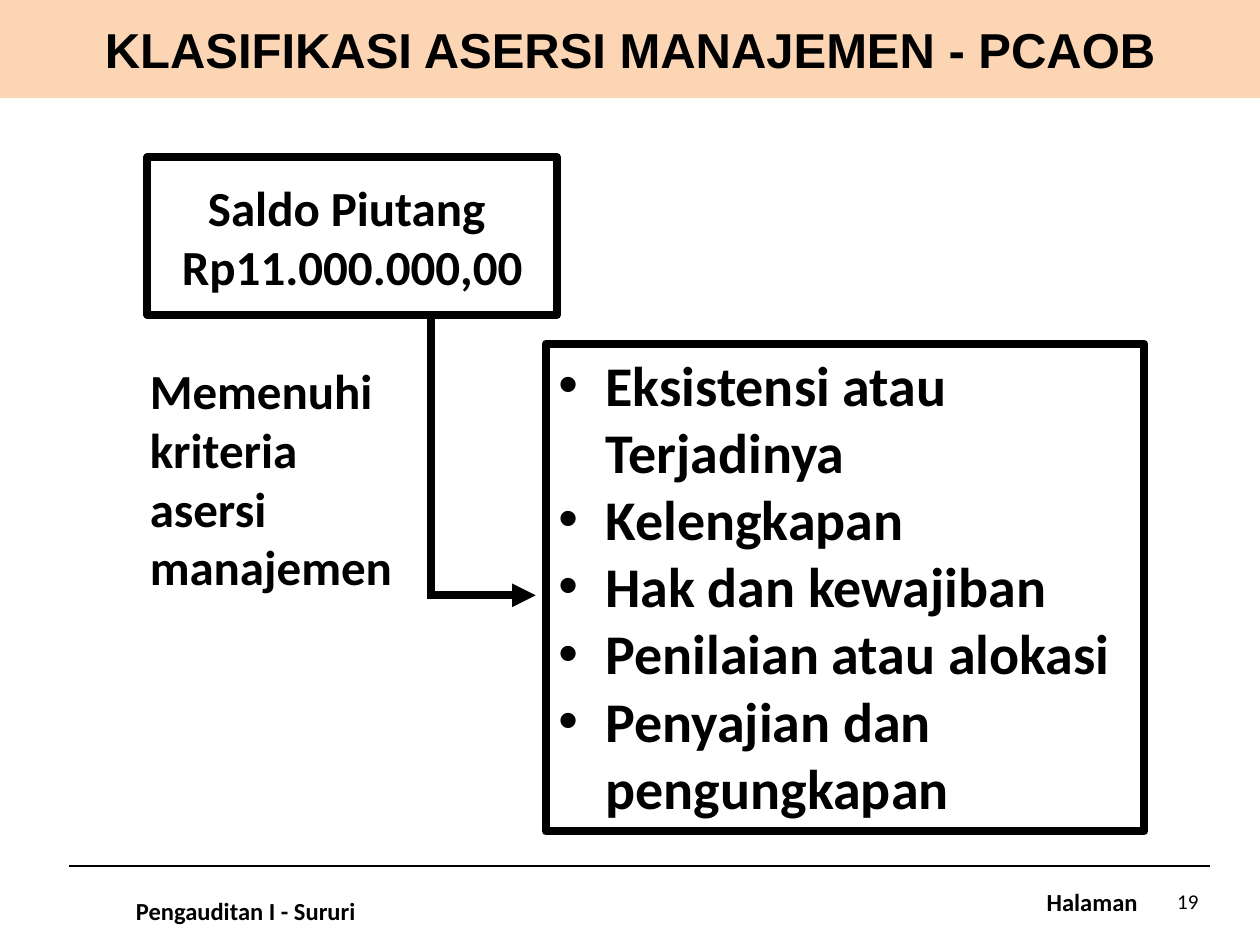
from dataclasses import dataclass

from lxml.etree import SubElement
from pptx import Presentation
from pptx.dml.color import RGBColor as Rgb
from pptx.enum.shapes import MSO_CONNECTOR as Link, MSO_SHAPE as Kind
from pptx.enum.text import MSO_ANCHOR as Anchor, MSO_AUTO_SIZE as Fit, PP_ALIGN as Align
from pptx.oxml.ns import qn
from pptx.util import Cm, Pt


@dataclass(frozen=True)
class Theme:
    ink: Rgb = Rgb(0, 0, 0)
    band: Rgb = Rgb(0xFC, 0xD5, 0xB5)
    head: str = "Arial"
    body: str = "Calibri"
    large: int = 32
    main: int = 28
    foot: int = 14
    page: int = 12
    thick: float = 4.5
    thin: float = 1.5


@dataclass(frozen=True)
class Box:
    """Place and size in centimetres."""
    left: float
    top: float
    width: float
    height: float

    def lengths(self) -> tuple:
        return Cm(self.left), Cm(self.top), Cm(self.width), Cm(self.height)


@dataclass(frozen=True)
class Label:
    text: str
    box: Box
    size: int
    bold: bool = True
    align: Align = Align.LEFT
    anchor: Anchor = Anchor.TOP
    wrap: bool = False


@dataclass(frozen=True)
class Stroke:
    """A line between two points, in centimetres."""
    start: tuple
    end: tuple
    width: float
    arrow: bool = False


THEME = Theme()
WIDE, HIGH = 25.4, 19.05
STEM, ELBOW = 8.69, 12.0  # x of the stem and y of its turn
RULE = 17.46

TITLE = Box(0, 0, WIDE, 1.98)
LIST = Box(11, 6.93, 12.07, 9.83)
SALDO = Box(2.97, 3.17, 8.26, 3.18)

ITEMS = [
    "Eksistensi atau Terjadinya",
    "Kelengkapan",
    "Hak dan kewajiban",
    "Penilaian atau alokasi",
    "Penyajian dan pengungkapan",
]
LABELS = [
    Label("Memenuhi kriteria asersi manajemen", Box(2.77, 7.14, 5.49, 5.05),
          THEME.main, wrap=True),
    Label("Pengauditan I - Sururi", Box(2.49, 17.93, 5.08, 0.86), THEME.foot),
    Label("Halaman", Box(20.85, 17.75, 2.36, 0.86), THEME.foot),
    Label("19", Box(23.22, 17.65, 1.19, 1.02), THEME.page, bold=False,
          align=Align.RIGHT, anchor=Anchor.MIDDLE, wrap=True),
]
STROKES = [
    Stroke((1.4, RULE), (24.4, RULE), THEME.thin),
    Stroke((STEM, SALDO.top + SALDO.height), (STEM, ELBOW + 0.08), THEME.thick),
    Stroke((STEM, ELBOW), (10.8, ELBOW), THEME.thick, arrow=True),
]


def write(shape, lines: list, *, size: int, font: str = THEME.body, bold: bool = True,
          align: Align = Align.LEFT, anchor: Anchor = Anchor.TOP, wrap: bool = True) -> None:
    frame = shape.text_frame
    frame.text = "\n".join(lines)
    frame.auto_size = Fit.NONE
    frame.word_wrap = wrap
    frame.vertical_anchor = anchor
    for para in frame.paragraphs:
        para.alignment = align
        para.space_before = Pt(0)
        para.font.name = font
        para.font.size = Pt(size)
        para.font.bold = bold
        para.font.color.rgb = THEME.ink


def place(shape, box: Box) -> None:
    shape.left, shape.top, shape.width, shape.height = box.lengths()


def frame_in(shape) -> None:
    """Give the shape a thick outline and no fill."""
    shape.fill.background()
    shape.line.color.rgb = THEME.ink
    shape.line.width = Pt(THEME.thick)


def add_label(slide, label: Label) -> None:
    shape = slide.shapes.add_textbox(*label.box.lengths())
    write(shape, [label.text], size=label.size, bold=label.bold, align=label.align,
          anchor=label.anchor, wrap=label.wrap)


def add_stroke(slide, stroke: Stroke) -> None:
    ends = [Cm(n) for n in stroke.start + stroke.end]
    line = slide.shapes.add_connector(Link.STRAIGHT, *ends)
    line.line.color.rgb = THEME.ink
    line.line.width = Pt(stroke.width)
    if stroke.arrow:
        SubElement(line.line._get_or_add_ln(), qn("a:tailEnd"), type="triangle")
    SubElement(line._element.spPr, qn("a:effectLst"))


def main() -> None:
    deck = Presentation()
    deck.slide_width, deck.slide_height = Cm(WIDE), Cm(HIGH)
    slide = deck.slides.add_slide(deck.slide_layouts[1])

    title, body = slide.placeholders
    place(title, TITLE)
    title.fill.solid()
    title.fill.fore_color.rgb = THEME.band
    write(title, ["KLASIFIKASI ASERSI MANAJEMEN - PCAOB"], size=THEME.main,
          font=THEME.head, align=Align.CENTER, anchor=Anchor.MIDDLE)

    place(body, LIST)
    frame_in(body)
    write(body, ITEMS, size=THEME.large)

    saldo = slide.shapes.add_shape(Kind.RECTANGLE, *SALDO.lengths())
    saldo.shadow.inherit = False
    frame_in(saldo)
    write(saldo, ["Saldo Piutang ", "Rp11.000.000,00"], size=THEME.main,
          align=Align.CENTER, anchor=Anchor.MIDDLE, wrap=False)

    for stroke in STROKES:
        add_stroke(slide, stroke)
    for label in LABELS:
        add_label(slide, label)
    deck.save("out.pptx")


if __name__ == "__main__":
    main()
